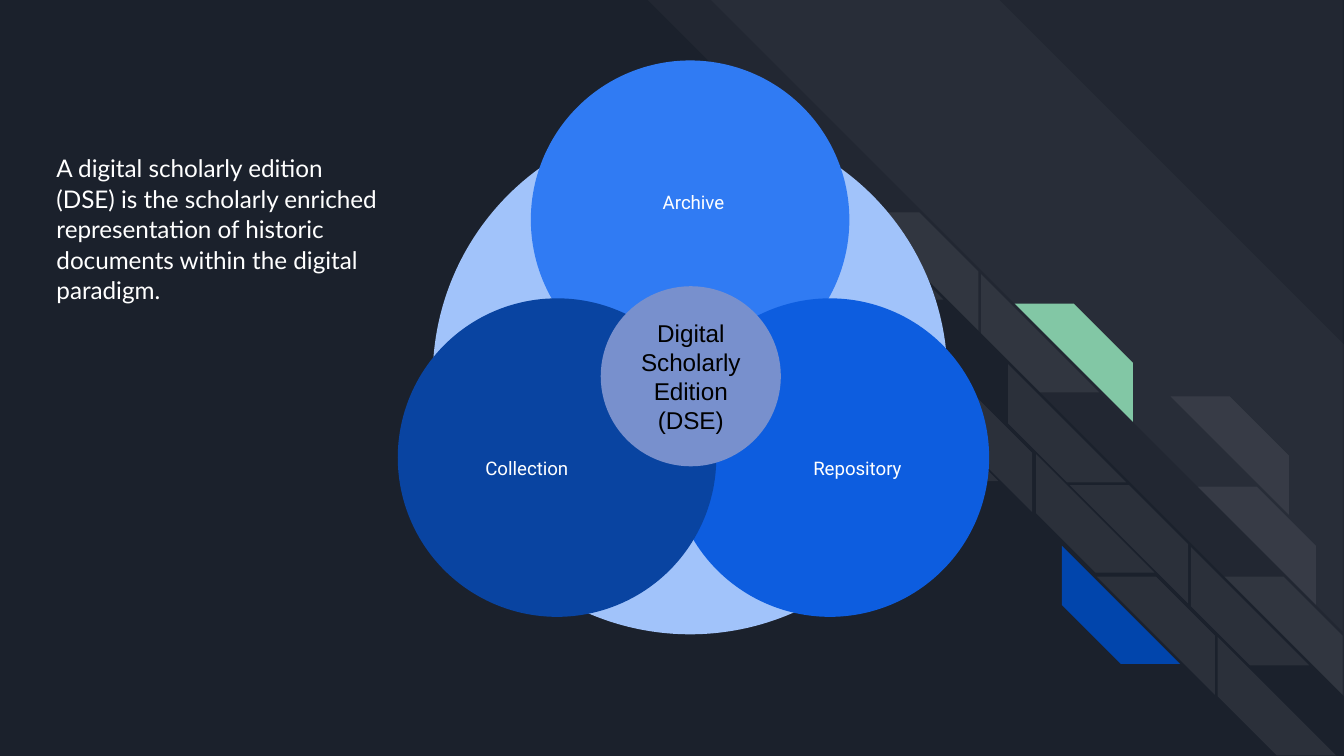
from pptx import Presentation
from pptx.dml.color import RGBColor
from pptx.enum.shapes import MSO_SHAPE as SHAPE
from pptx.enum.text import MSO_ANCHOR as ANCHOR, MSO_AUTO_SIZE as AUTO_SIZE, PP_ALIGN as ALIGN
from pptx.oxml.ns import qn
from pptx.util import Inches, Pt
from lxml import etree

THEME = {
    "background": "1B212C", "white": "FFFFFF", "black": "000000",
    "green": "82C7A5", "navy": "0145AC",
    "ring": "A1C3FA", "archive": "307BF3", "repository": "0D5DDF",
    "collection": "0944A1", "edition": "7890CD",
    "body_size": 13, "label_size": 10,
}

prs = Presentation()
prs.slide_width = Inches(10)
prs.slide_height = Inches(10) * 9 // 16
slide = prs.slides.add_slide(prs.slide_layouts[1])
slide.background.fill.solid()
slide.background.fill.fore_color.rgb = RGBColor.from_string(THEME["background"])
slide.shapes.title._element.getparent().remove(slide.shapes.title._element)


def add_filled(kind, left, top, size, color, alpha=100):
    """Add a square-framed shape without outline; alpha is a percentage."""
    shape = slide.shapes.add_shape(kind, Inches(left), Inches(top), Inches(size), Inches(size))
    shape.shadow.inherit = False
    shape.line.fill.background()
    shape.fill.solid()
    shape.fill.fore_color.rgb = RGBColor.from_string(THEME[color])
    if alpha < 100:
        rgb = shape._element.spPr.find(qn("a:solidFill")).find(qn("a:srgbClr"))
        etree.SubElement(rgb, qn("a:alpha")).set("val", str(alpha * 1000))
    return shape


def write(shape, text, font, size, color, align=ALIGN.CENTER, anchor=ANCHOR.MIDDLE):
    frame = shape.text_frame
    frame.text = text
    settings = {"word_wrap": True, "auto_size": AUTO_SIZE.NONE, "vertical_anchor": anchor}
    settings.update({f"margin_{side}": Inches(0.1) for side in ("left", "top", "right", "bottom")})
    for name, value in settings.items():
        setattr(frame, name, value)
    paragraph = frame.paragraphs[0]
    paragraph.alignment = align
    run_font = paragraph.runs[0].font
    run_font.name, run_font.size = font, Pt(size)
    run_font.color.rgb = RGBColor.from_string(THEME[color])
    return paragraph


# Background: two wide translucent bands
for left, top, size, cut in [(4.82, 0, 5.18, 0.495), (5.29, 0, 4.7, 0)]:
    band = add_filled(SHAPE.DIAGONAL_STRIPE, left, top, size, "white", 3)
    band.adjustments[0] = cut
    band.rotation = 90

# Background: bricks, turned 270 on the lower edge and 90 on the upper edge
LOWER, UPPER = 270, 90
bricks = [
    (6.14, 1.35, LOWER, "white"), (6.4, 1.58, UPPER, "white"),
    (6.55, 2.7, LOWER, "white"), (6.8, 2.93, UPPER, "white"),
    (7.3, 2.04, LOWER, "white"), (7.55, 2.26, UPPER, "green"),
    (7.5, 2.71, LOWER, "white"), (8.71, 2.95, UPPER, "white"),
    (8.91, 3.62, UPPER, "white"), (7.71, 3.38, LOWER, "white"),
    (7.96, 3.61, UPPER, "white"), (7.9, 4.06, LOWER, "navy"),
    (8.16, 4.29, UPPER, "white"), (8.86, 4.07, LOWER, "white"),
    (9.11, 4.29, UPPER, "white"), (9.06, 4.74, LOWER, "white"),
]
for left, top, turn, color in bricks:
    brick = add_filled(SHAPE.DIAGONAL_STRIPE, left, top, 0.88, color, 7 if color == "white" else 100)
    brick.adjustments[0] = 0.5
    brick.rotation = turn

# Definition
definition = slide.placeholders[1]
definition.left, definition.top = Inches(0.32), Inches(1.03)
definition.width, definition.height = Inches(2.64), Inches(1.33)
sentence = write(
    definition,
    "A digital scholarly edition (DSE) is the scholarly enriched representation "
    "of historic documents within the digital paradigm.",
    "Lato", THEME["body_size"], "white", ALIGN.LEFT, ANCHOR.TOP)
bullet_props = sentence._p.get_or_add_pPr()
bullet_props.set("marL", "0")
bullet_props.set("indent", "0")
etree.SubElement(bullet_props, qn("a:buNone"))
for name, value in {"line_spacing": 1.05, "space_before": Pt(0), "space_after": Pt(12)}.items():
    setattr(sentence, name, value)

# Outer ring, then the three overlapping circles with their labels
add_filled(SHAPE.OVAL, 3.22, 0.89, 3.83, "ring")
circles = [
    ("Archive", "archive", 3.95, 0.45, 4.34, 1.12),
    ("Repository", "repository", 4.99, 2.22, 5.56, 3.1),
    ("Collection", "collection", 2.96, 2.22, 3.1, 3.1),
]
for text, color, left, top, label_left, label_top in circles:
    add_filled(SHAPE.OVAL, left, top, 2.37, color)
    label = slide.shapes.add_textbox(Inches(label_left), Inches(label_top), Inches(1.64), Inches(0.77))
    write(label, text, "Roboto", THEME["label_size"], "white")

# Centre
edition = add_filled(SHAPE.OVAL, 4.47, 2.13, 1.34, "edition")
write(edition, "Digital Scholarly Edition (DSE)", "Arial", THEME["body_size"], "black")

prs.save("out.pptx")
